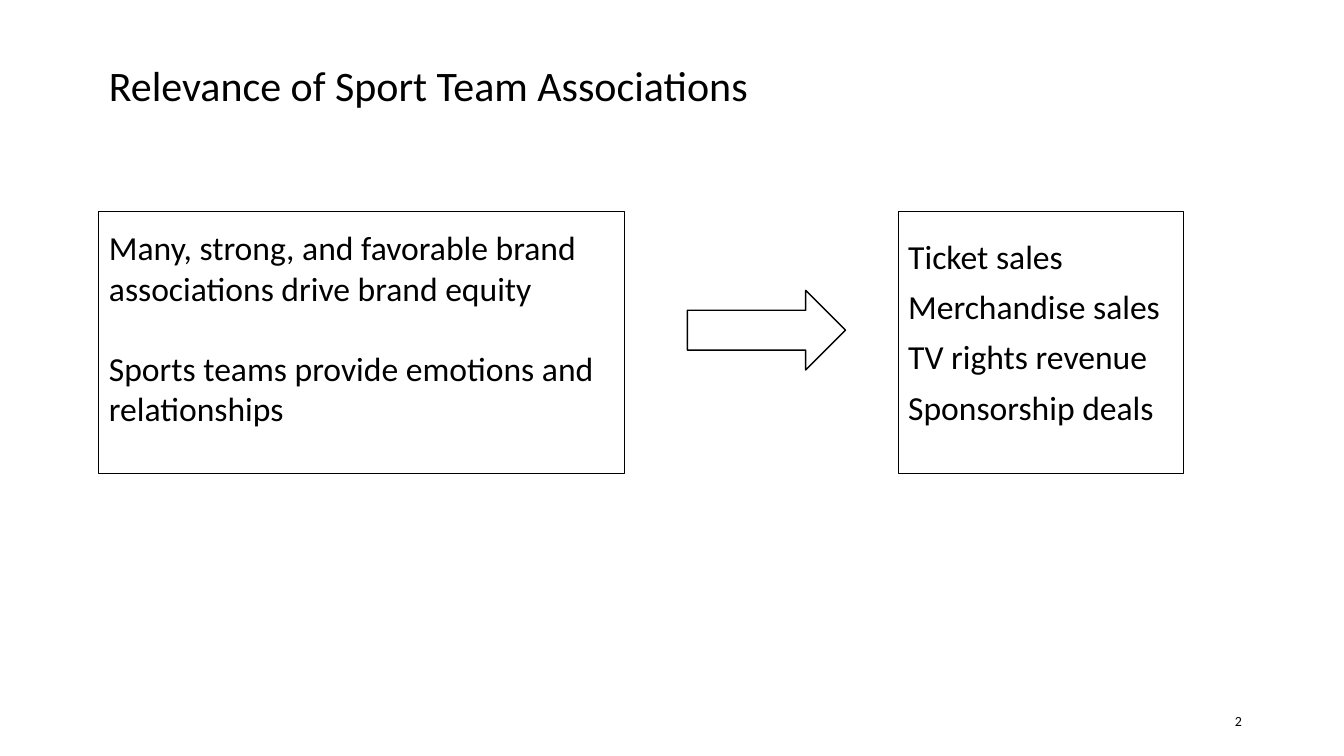
import pptx
import pptx.dml.color
import pptx.enum.shapes
import pptx.enum.text
from dataclasses import dataclass
from lxml import etree
from pptx.util import Pt

ALIGN = pptx.enum.text.PP_ALIGN
ANCHOR = pptx.enum.text.MSO_ANCHOR


@dataclass(frozen=True)
class Theme:
    font: str = "Calibri"
    ink: pptx.dml.color.RGBColor = pptx.dml.color.RGBColor(0, 0, 0)
    title_size: float = 30
    body_size: float = 24
    number_size: float = 10


THEME = Theme()
BOX_TOP, BOX_HEIGHT = 151.2, 187.2
TITLE = "Relevance of Sport Team Associations"
DRIVERS = [
    "Many, strong, and favorable brand associations drive brand equity",
    "Sports teams provide emotions and relationships",
]
REVENUES = ["Ticket sales", "Merchandise sales", "TV rights revenue", "Sponsorship deals"]


def place(shape, left, top, width, height):
    shape.left, shape.top = Pt(left), Pt(top)
    shape.width, shape.height = Pt(width), Pt(height)


def outline(shape, width):
    shape.fill.background()
    shape.line.color.rgb = THEME.ink
    shape.line.width = Pt(width)


def write(shape, lines, size, align=ALIGN.LEFT, anchor=ANCHOR.TOP,
          inset_top=3.6, line_spacing=0.9, gap=0):
    """Fill a shape with paragraphs, set apart by gap points."""
    frame = shape.text_frame
    frame.text = "\n".join(lines)
    frame.word_wrap = True
    frame.auto_size = pptx.enum.text.MSO_AUTO_SIZE.NONE
    frame.vertical_anchor = anchor
    frame.margin_left = frame.margin_right = Pt(7.2)
    frame.margin_top, frame.margin_bottom = Pt(inset_top), Pt(3.6)
    for index, paragraph in enumerate(frame.paragraphs):
        paragraph.alignment = align
        paragraph.line_spacing = line_spacing
        paragraph.space_before = Pt(gap if index else 0)
        for run in paragraph.runs:
            run.font.name = THEME.font
            run.font.size = Pt(size)
            run.font.color.rgb = THEME.ink


def remove_bullets(shape):
    for paragraph in shape.text_frame.paragraphs:
        properties = paragraph._p.get_or_add_pPr()
        properties.set("marL", "0")
        properties.set("indent", "0")
        etree.SubElement(properties, pptx.oxml.ns.qn("a:buNone"))


def fill_list_box(shape, lines, left, width, **spacing):
    place(shape, left, BOX_TOP, width, BOX_HEIGHT)
    outline(shape, 0.75)
    write(shape, lines, THEME.body_size, **spacing)
    remove_bullets(shape)


def add_arrow(slide, left, top, width, height):
    arrow = slide.shapes.add_shape(
        pptx.enum.shapes.MSO_SHAPE.RIGHT_ARROW,
        Pt(left), Pt(top), Pt(width), Pt(height))
    arrow.shadow.inherit = False
    outline(arrow, 1)


def add_slide_number(slide, number):
    box = slide.shapes.add_textbox(Pt(678.2), Pt(500.4), Pt(216), Pt(28.8))
    write(box, [str(number)], THEME.number_size, ALIGN.RIGHT, ANCHOR.MIDDLE, line_spacing=1)


def main():
    presentation = pptx.Presentation()
    presentation.slide_width, presentation.slide_height = Pt(960), Pt(540)
    two_content = presentation.slide_layouts.get_by_name("Two Content")
    slide = presentation.slides.add_slide(two_content)
    title, drivers, revenues = list(slide.placeholders)[:3]

    place(title, 70.6, 43.2, 673.2, 28)
    write(title, [TITLE], THEME.title_size)
    fill_list_box(drivers, DRIVERS, 70.6, 375.8, inset_top=11, line_spacing=1, gap=28.5)
    fill_list_box(revenues, REVENUES, 641.5, 203.8, inset_top=20.5, gap=10)
    add_arrow(slide, 491, 207.4, 113, 56.9)
    add_slide_number(slide, 2)
    presentation.save("out.pptx")


if __name__ == "__main__":
    main()
